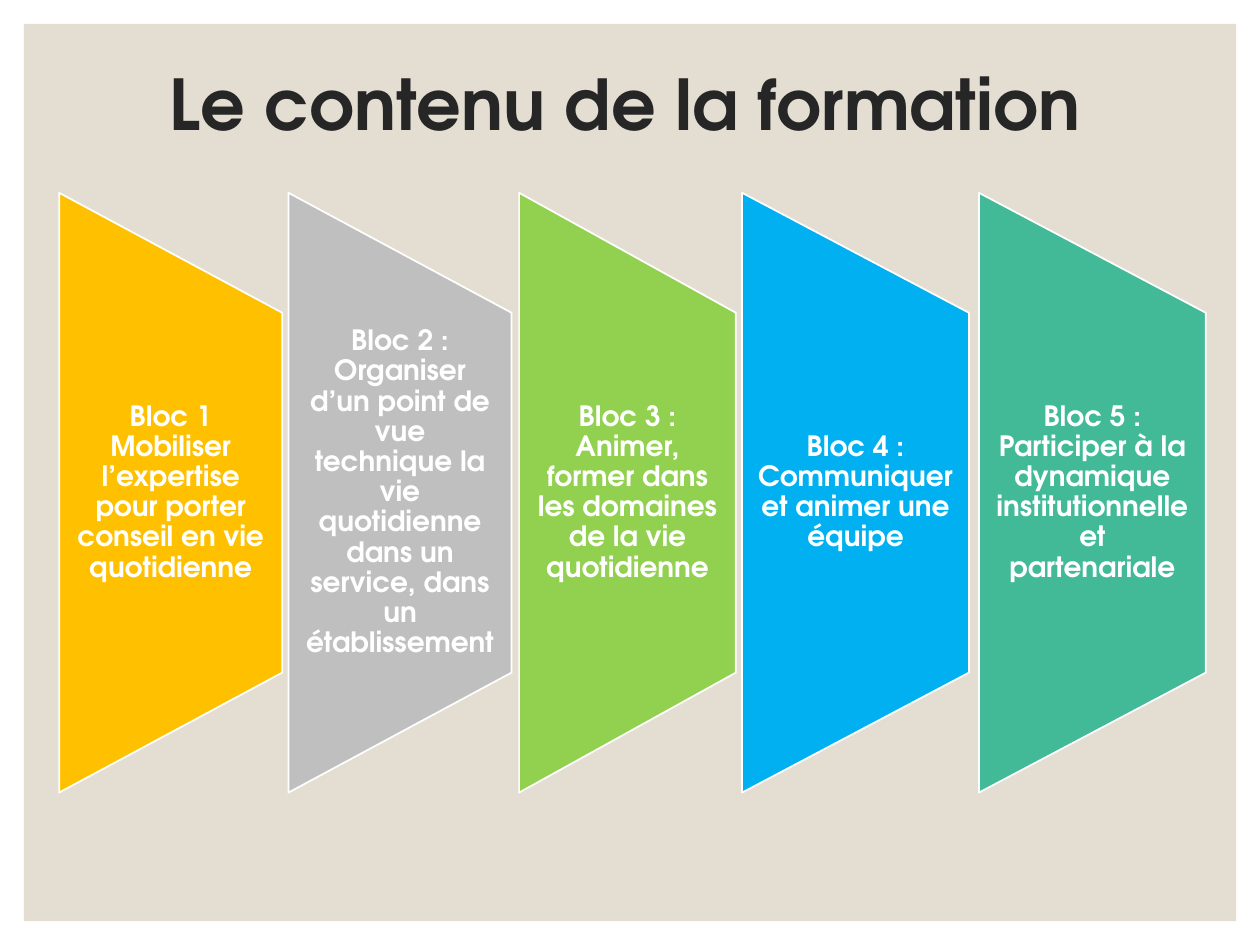
from pptx import Presentation
from pptx.dml.color import RGBColor
from pptx.enum.shapes import MSO_SHAPE
from pptx.enum.text import MSO_ANCHOR, PP_ALIGN
from pptx.util import Inches, Pt

RECTANGLE = MSO_SHAPE.RECTANGLE
TRAPEZOID = MSO_SHAPE.FLOWCHART_MANUAL_OPERATION
MIDDLE = MSO_ANCHOR.MIDDLE
LEFT, CENTER = PP_ALIGN.LEFT, PP_ALIGN.CENTER

FONT = "TeX Gyre Adventor"
BEIGE = RGBColor(0xE3, 0xDE, 0xD1)
DARK = RGBColor(0x26, 0x26, 0x26)
WHITE = RGBColor(0xFF, 0xFF, 0xFF)
AMBER = RGBColor(0xFF, 0xC0, 0x00)
GREY = RGBColor(0xBF, 0xBF, 0xBF)
GREEN = RGBColor(0x92, 0xD0, 0x50)
BLUE = RGBColor(0x00, 0xB0, 0xF0)
TEAL = RGBColor(0x42, 0xBA, 0x97)

TITLE = "Le contenu de la formation"
# text, colour, left, width
BLOCKS = [
    ("Bloc 1 Mobiliser l’expertise pour porter conseil en vie quotidienne",
     AMBER, 0.47, 1.77),
    ("Bloc 2 : Organiser d’un point de vue technique la vie quotidienne "
     "dans un service, dans un établissement", GREY, 2.29, 1.77),
    ("Bloc 3 : Animer, former dans les domaines de la vie quotidienne",
     GREEN, 4.12, 1.72),
    ("Bloc 4 : Communiquer et animer une équipe", BLUE, 5.89, 1.8),
    ("Bloc 5 : Participer à la dynamique institutionnelle et partenariale",
     TEAL, 7.77, 1.8),
]
BLOCK_HEIGHT = 4.76
BLOCK_MIDDLE = 3.91
LABEL_HEIGHT = 2.86


def add_filled(slide, preset, left, top, width, height, color):
    shape = slide.shapes.add_shape(
        preset, Inches(left), Inches(top), Inches(width), Inches(height))
    shape.shadow.inherit = False
    shape.fill.solid()
    shape.fill.fore_color.rgb = color
    shape.line.fill.background()
    return shape


def add_label(slide, text, left, top, width, height, size, color, align,
              inset_x, inset_y):
    label = slide.shapes.add_textbox(
        Inches(left), Inches(top), Inches(width), Inches(height))
    frame = label.text_frame
    frame.word_wrap = True
    frame.vertical_anchor = MIDDLE
    frame.margin_left = frame.margin_right = Inches(inset_x)
    frame.margin_top = frame.margin_bottom = Inches(inset_y)
    paragraph = frame.paragraphs[0]
    paragraph.alignment = align
    paragraph.line_spacing = 0.9
    run = paragraph.add_run()
    run.text = text
    run.font.name = FONT
    run.font.size = Pt(size)
    run.font.bold = True
    run.font.color.rgb = color


def add_block(slide, text, color, left, width):
    """Add a trapezoid turned on its side, with upright text over it."""
    center = left + width / 2
    trapezoid = add_filled(
        slide, TRAPEZOID, center - BLOCK_HEIGHT / 2, BLOCK_MIDDLE - width / 2,
        BLOCK_HEIGHT, width, color)
    trapezoid.rotation = 270
    trapezoid.line.color.rgb = WHITE
    trapezoid.line.width = Pt(1)
    add_label(slide, text, left, BLOCK_MIDDLE - LABEL_HEIGHT / 2, width,
              LABEL_HEIGHT, 16, WHITE, CENTER, 0.11, 0)


def main():
    prs = Presentation()
    prs.slide_width, prs.slide_height = Inches(10), Inches(7.5)
    slide = prs.slides.add_slide(prs.slide_layouts[6])
    slide.background.fill.solid()
    slide.background.fill.fore_color.rgb = WHITE

    add_filled(slide, RECTANGLE, 0.19, 0.19, 9.62, 7.12, BEIGE)
    add_label(slide, TITLE, 1.25, 0.09, 8.29, 1.53, 40, DARK, LEFT, 0.1, 0.05)
    for block in BLOCKS:
        add_block(slide, *block)
    prs.save("out.pptx")


if __name__ == "__main__":
    main()
